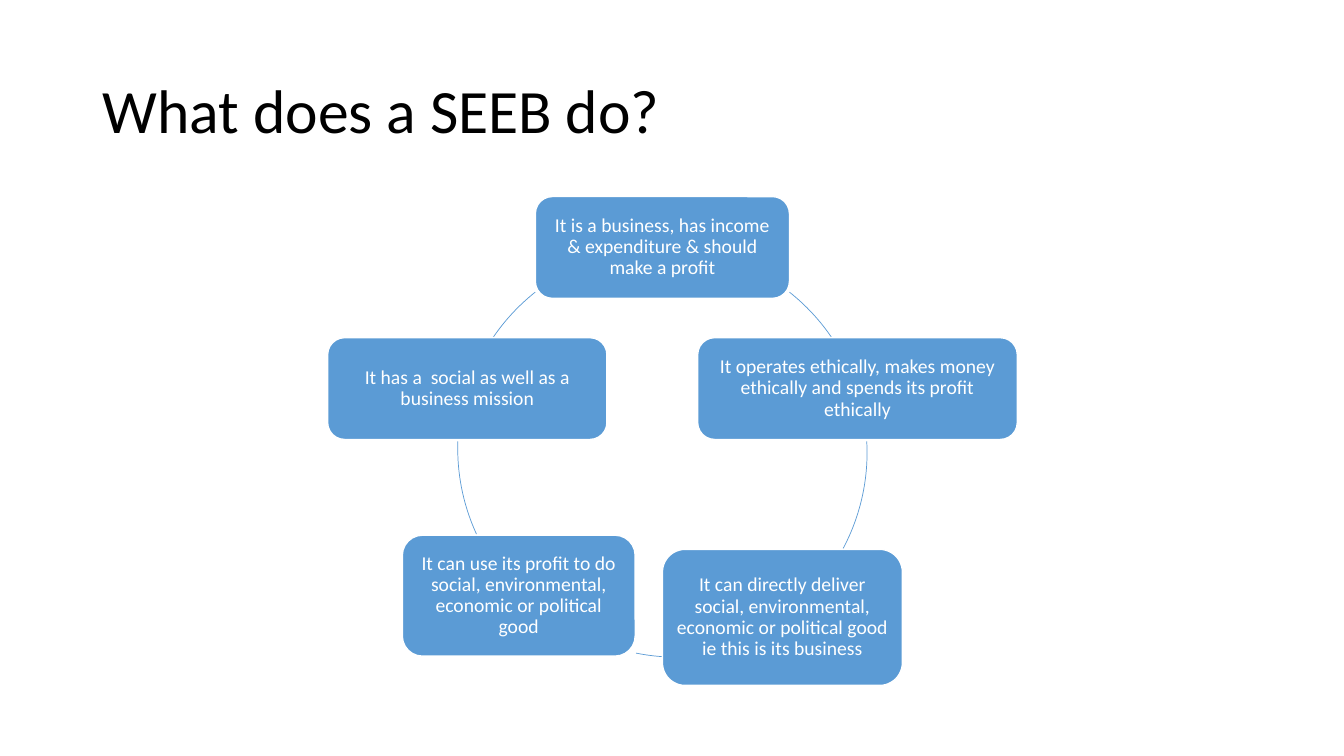
from dataclasses import dataclass

from pptx import Presentation
from pptx.dml.color import RGBColor
from pptx.enum.shapes import MSO_SHAPE
from pptx.enum.text import MSO_ANCHOR, PP_ALIGN
from pptx.slide import Slide
from pptx.text.text import TextFrame
from pptx.util import Emu, Pt

ROUNDED, ARC = MSO_SHAPE.ROUNDED_RECTANGLE, MSO_SHAPE.ARC
MIDDLE = MSO_ANCHOR.MIDDLE
LEFT, CENTER = PP_ALIGN.LEFT, PP_ALIGN.CENTER
BLANK_LAYOUT = 6
RING_SIZE = 406
BOX_INSET = 6
ARC_UNITS_PER_DEGREE = 0.6  # 60000 per degree, in steps of 100000


@dataclass(frozen=True)
class Theme:
    font: str = "Calibri"
    title_size: int = 44
    body_size: int = 14
    black: RGBColor = RGBColor(0x00, 0x00, 0x00)
    white: RGBColor = RGBColor(0xFF, 0xFF, 0xFF)
    blue: RGBColor = RGBColor(0x5B, 0x9B, 0xD5)


@dataclass(frozen=True)
class Activity:
    text: str
    left: int
    top: int
    width: int
    height: int


@dataclass(frozen=True)
class RingArc:
    """Part of the ring, from start to end in degrees clockwise from the right."""
    start: float
    end: float
    left: int = 454
    top: int = 246


THEME = Theme()

ACTIVITIES = [
    Activity("It is a business, has income & expenditure & should make a profit",
             531, 195, 252, 101),
    Activity("It operates ethically, makes money ethically and spends its profit ethically",
             692, 335, 317, 101),
    Activity("It can directly deliver social, environmental, economic or political good "
             "ie this is its business", 657, 545, 238, 135),
    Activity("It can use its profit to do social, environmental, economic or political good",
             399, 531, 231, 120),
    Activity("It has a  social as well as a business mission", 325, 335, 277, 101),
]

RING_ARCS = [
    RingArc(308.4, 325.8),
    RingArc(356.9, 28),
    RingArc(94, 101.4, left=468),
    RingArc(155.2, 182, top=242),
    RingArc(214.2, 231.6),
]


def px(length: int) -> Emu:
    """Convert px, at 100 to the inch, into EMU."""
    return Emu(length * 9144)


def write(frame: TextFrame, text: str, size: int, color: RGBColor, align: PP_ALIGN) -> None:
    frame.word_wrap = True
    frame.vertical_anchor = MIDDLE
    para = frame.paragraphs[0]
    para.text = text
    para.alignment = align
    para.line_spacing = 0.9
    para.font.name = THEME.font
    para.font.size = Pt(size)
    para.font.color.rgb = color


def draw_title(page: Slide, text: str) -> None:
    box = page.shapes.add_textbox(px(92), px(40), px(1150), px(145))
    write(box.text_frame, text, THEME.title_size, THEME.black, LEFT)


def draw_arc(page: Slide, arc: RingArc) -> None:
    shape = page.shapes.add_shape(ARC, px(arc.left), px(arc.top), px(RING_SIZE), px(RING_SIZE))
    shape.adjustments[0] = arc.start * ARC_UNITS_PER_DEGREE
    shape.adjustments[1] = arc.end * ARC_UNITS_PER_DEGREE
    shape.shadow.inherit = False
    shape.fill.background()
    shape.line.color.rgb = THEME.blue
    shape.line.width = Pt(0.5)


def draw_activity(page: Slide, activity: Activity) -> None:
    box = page.shapes.add_shape(ROUNDED, px(activity.left), px(activity.top),
                                px(activity.width), px(activity.height))
    box.shadow.inherit = False
    box.fill.solid()
    box.fill.fore_color.rgb = THEME.blue
    box.line.color.rgb = THEME.white
    box.line.width = Pt(1)
    frame = box.text_frame
    frame.margin_left = frame.margin_right = px(BOX_INSET)
    frame.margin_top = frame.margin_bottom = px(BOX_INSET)
    write(frame, activity.text, THEME.body_size, THEME.white, CENTER)


def main() -> None:
    deck = Presentation()
    deck.slide_width, deck.slide_height = px(1333), px(750)
    page = deck.slides.add_slide(deck.slide_layouts[BLANK_LAYOUT])
    draw_title(page, "What does a SEEB do?")
    for arc in RING_ARCS:
        draw_arc(page, arc)
    for activity in ACTIVITIES:
        draw_activity(page, activity)
    deck.save("out.pptx")


if __name__ == "__main__":
    main()
